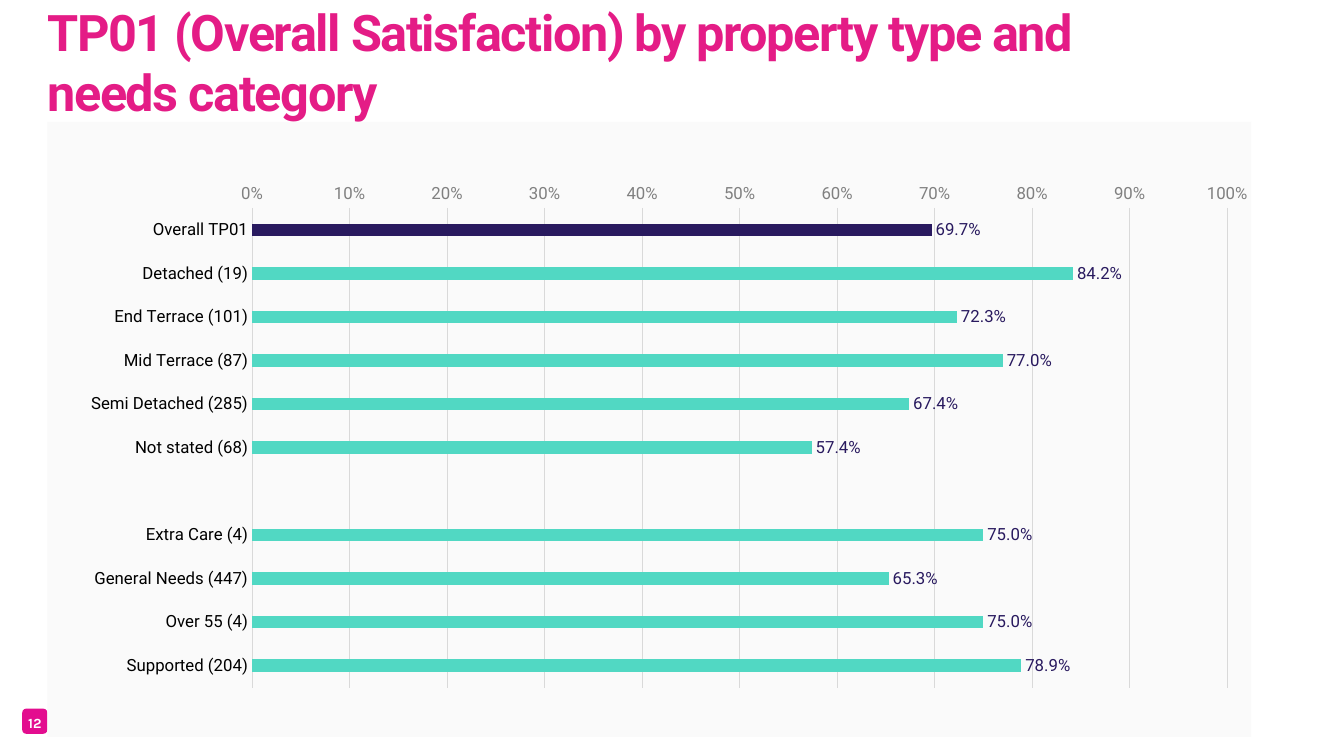
from lxml import etree
from pptx import Presentation
from pptx.chart.data import CategoryChartData
from pptx.dml.color import RGBColor
from pptx.enum.chart import XL_CHART_TYPE, XL_LABEL_POSITION, XL_TICK_MARK
from pptx.enum.shapes import MSO_SHAPE
from pptx.enum.text import MSO_ANCHOR, PP_ALIGN
from pptx.oxml import parse_xml
from pptx.oxml.ns import nsdecls, qn
from pptx.util import Pt

PX = 9144  # 100 px to the inch
BAR = XL_CHART_TYPE.BAR_CLUSTERED
END = XL_LABEL_POSITION.OUTSIDE_END
NO_TICK = XL_TICK_MARK.NONE
ROUND = MSO_SHAPE.ROUNDED_RECTANGLE
LOW, MID = MSO_ANCHOR.BOTTOM, MSO_ANCHOR.MIDDLE
LEFT, CENTER = PP_ALIGN.LEFT, PP_ALIGN.CENTER

COLORS = {
    "title": "E41C86", "badge": "E30D8F", "white": "FFFFFF",
    "navy": "291A5F", "teal": "51D8C3", "black": "000000",
    "gray": "808080", "grid": "D9D9D9", "panel": "FAFAFA",
}
FACE = "Roboto"
PLOT = {"x": 0.17, "y": 0.14, "w": 0.81, "h": 0.78}
SCORES = [
    ("Overall TP01", 0.697), ("Detached (19)", 0.842),
    ("End Terrace (101)", 0.723), ("Mid Terrace (87)", 0.77),
    ("Semi Detached (285)", 0.674), ("Not stated (68)", 0.574),
    ("", None),
    ("Extra Care (4)", 0.75), ("General Needs (447)", 0.653),
    ("Over 55 (4)", 0.75), ("Supported (204)", 0.789),
]


def px(*sizes):
    return [size * PX for size in sizes]


def rgb(name):
    return RGBColor.from_string(COLORS[name])


def style(font, size, color, face=FACE, bold=False):
    font.name, font.size, font.bold = face, Pt(size), bold
    font.color.rgb = rgb(color)


def put_text(shape, text, size, color, face=FACE, bold=False,
             align=LEFT, anchor=MID, track=0, lead=None):
    frame = shape.text_frame
    frame.word_wrap = True
    frame.vertical_anchor = anchor
    frame.margin_left = frame.margin_right = 0
    frame.margin_top = frame.margin_bottom = 0
    para = frame.paragraphs[0]
    para.alignment = align
    if lead:
        para.line_spacing = Pt(lead)
    run = para.add_run()
    run.text = text
    style(run.font, size, color, face, bold)
    if track:
        run.font._element.set("spc", str(track * 100))


def add_title(slide, text):
    title = slide.shapes.title
    title.left, title.top, title.width, title.height = px(47, 0, 1117, 121)
    put_text(title, text, 36, "title", bold=True, anchor=LOW, track=-1)


def add_badge(slide, text):
    group = slide.shapes.add_group_shape()
    tile = group.shapes.add_shape(ROUND, *px(22, 703, 25, 25))
    tile.shadow.inherit = False
    tile.fill.solid()
    tile.fill.fore_color.rgb = rgb("badge")
    tile.line.fill.background()
    label = group.shapes.add_textbox(*px(22, 709, 25, 13))
    put_text(label, text, 10, "white", face="Karla", bold=True,
             align=CENTER, anchor=MSO_ANCHOR.TOP, lead=12)


def set_plot(chart):
    """Fix the inner plot area as shares of the chart."""
    area = chart._chartSpace.chart.plotArea
    for old in area.findall(qn("c:layout")):
        area.remove(old)
    layout = parse_xml(f"<c:layout {nsdecls('c')}/>")
    manual = etree.SubElement(layout, qn("c:manualLayout"))
    parts = {"layoutTarget": "inner", "xMode": "edge", "yMode": "edge", **PLOT}
    for tag, value in parts.items():
        etree.SubElement(manual, qn(f"c:{tag}")).set("val", str(value))
    area.insert(0, layout)


def set_panel(chart):
    """Fill the chart background."""
    panel = parse_xml(
        f'<c:spPr {nsdecls("c", "a")}><a:solidFill><a:srgbClr '
        f'val="{COLORS["panel"]}"/></a:solidFill>'
        '<a:ln><a:noFill/></a:ln></c:spPr>')
    chart._chartSpace.chart.addnext(panel)


def set_axis(axis, color):
    axis.major_tick_mark = axis.minor_tick_mark = NO_TICK
    axis.format.line.fill.background()
    style(axis.tick_labels.font, 12, color)


def add_bars(slide):
    data = CategoryChartData(number_format="0.0%")
    names, values = zip(*SCORES)
    data.categories = names
    data.add_series("Series 1", values)
    chart = slide.shapes.add_chart(BAR, *px(47, 121, 1194, 610), data).chart
    chart.has_legend = chart.has_title = False
    style(chart.font, 10, "navy")
    set_plot(chart)
    set_panel(chart)

    # Axes
    set_axis(chart.category_axis, "black")
    chart.category_axis.reverse_order = True
    scale = chart.value_axis
    set_axis(scale, "gray")
    scale.minimum_scale, scale.maximum_scale, scale.major_unit = 0, 1, 0.1
    scale.tick_labels.number_format = "0%"
    scale.tick_labels.number_format_is_linked = False
    scale.has_major_gridlines = True
    grid = scale.major_gridlines.format.line
    grid.color.rgb, grid.width = rgb("grid"), Pt(0.25)

    # Bars, with the overall score picked out
    plot = chart.plots[0]
    plot.gap_width, plot.vary_by_categories = 250, False
    bars = plot.series[0]
    bars.invert_if_negative = False
    for part, color in ((bars, "teal"), (bars.points[0], "navy")):
        part.format.fill.solid()
        part.format.fill.fore_color.rgb = rgb(color)

    # Value labels
    labels = bars.data_labels
    labels.show_value, labels.position = True, END
    labels.number_format, labels.number_format_is_linked = "0.0%", False
    style(labels.font, 12, "navy")


def main():
    deck = Presentation()
    deck.slide_width, deck.slide_height = px(1333, 750)
    slide = deck.slides.add_slide(deck.slide_layouts[5])
    add_badge(slide, "12")
    add_title(slide, "TP01 (Overall Satisfaction) by property type "
                     "and needs category")
    add_bars(slide)
    deck.save("out.pptx")


if __name__ == "__main__":
    main()
